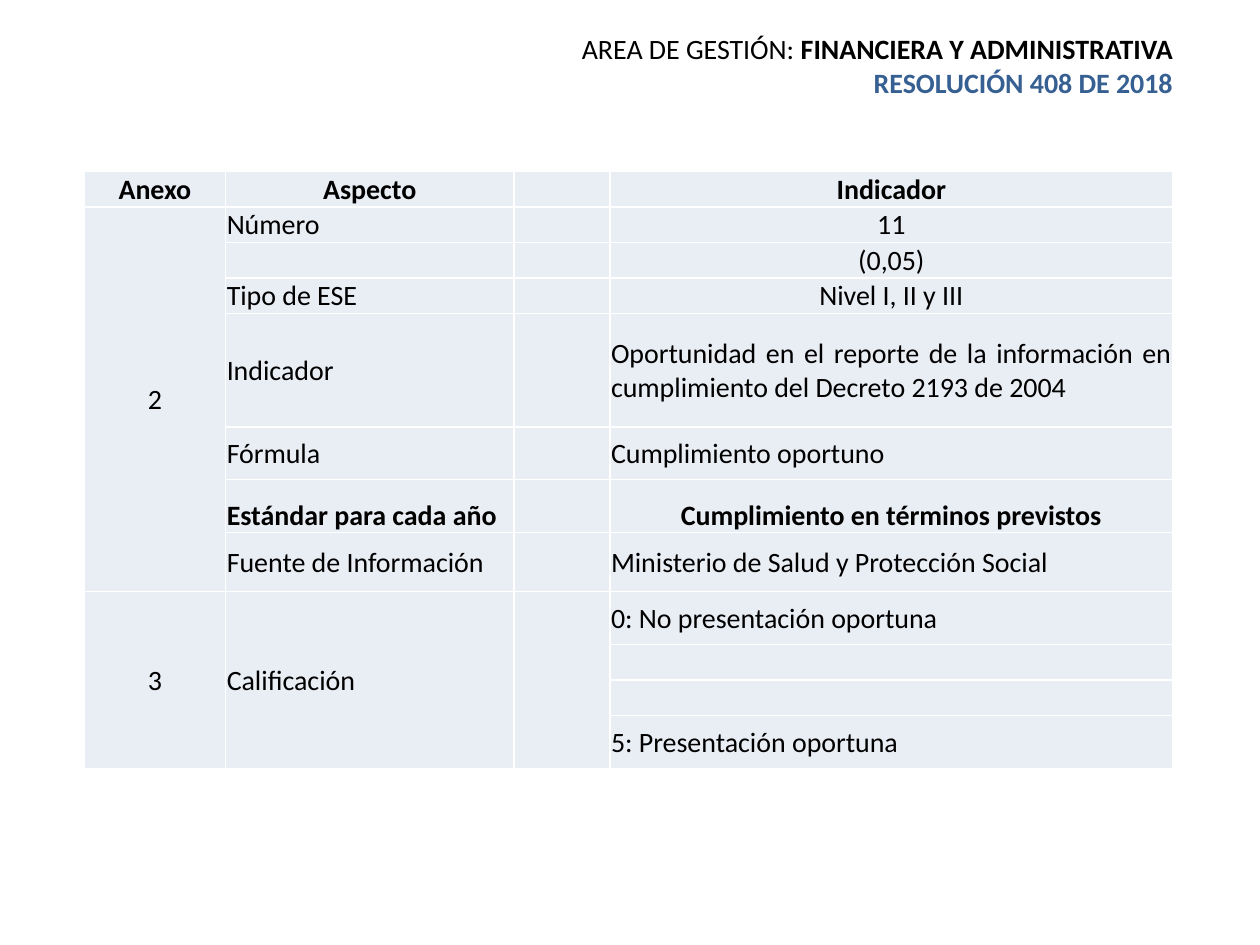
import pptx
import pptx.dml.color
import pptx.enum.text
import pptx.oxml
import pptx.oxml.ns
import pptx.util
from pptx.util import Inches

RGBColor = pptx.dml.color.RGBColor
ALIGN = pptx.enum.text.PP_ALIGN
ANCHOR = pptx.enum.text.MSO_ANCHOR

BLACK = RGBColor(0x00, 0x00, 0x00)
WHITE = RGBColor(0xFF, 0xFF, 0xFF)
BLUE = RGBColor(0x37, 0x60, 0x92)
CELL_FILL = RGBColor(0xE9, 0xED, 0xF4)
FONT = "Calibri"
SIZE = pptx.util.Pt(16)

L, C, J = ALIGN.LEFT, ALIGN.CENTER, ALIGN.JUSTIFY
MID, LOW = ANCHOR.MIDDLE, ANCHOR.BOTTOM

COLUMNS = [1.12, 2.29, 0.76, 4.47]
# Row height, anchor, bold, annex, aspect, indicator, indicator alignment
ROWS = [
    (0.28, LOW, True, "Anexo", "Aspecto", "Indicador", C),
    (0.28, LOW, False, "2", "Número", "11", C),
    (0.28, LOW, False, "", "", "(0,05)", C),
    (0.28, LOW, False, "", "Tipo de ESE", "Nivel I, II y III", C),
    (0.9, MID, False, "", "Indicador",
     "Oportunidad en el reporte de la información en cumplimiento "
     "del Decreto 2193 de 2004", J),
    (0.42, MID, False, "", "Fórmula", "Cumplimiento oportuno", L),
    (0.42, LOW, True, "", "Estándar para cada año",
     "Cumplimiento en términos previstos", C),
    (0.47, MID, False, "", "Fuente de Información",
     "Ministerio de Salud y Protección Social", L),
    (0.42, MID, False, "3", "Calificación", "0: No presentación oportuna", L),
    (0.28, MID, False, "", "", "", L),
    (0.28, MID, False, "", "", "", L),
    (0.42, MID, False, "", "", "5: Presentación oportuna", L),
]
# First row, last row, column
MERGES = [(1, 7, 0), (8, 11, 0), (8, 11, 1), (8, 11, 2)]


def add_text(p, text, bold=False, color=BLACK, align=L):
    p.alignment = align
    r = p.add_run()
    r.text = text
    r.font.name, r.font.size, r.font.bold = FONT, SIZE, bold
    r.font.color.rgb = color


def set_borders(cell, color=WHITE, width=pptx.util.Pt(1)):
    tc_pr = cell._tc.get_or_add_tcPr()
    for i, side in enumerate(("lnL", "lnR", "lnT", "lnB")):
        tc_pr.insert(i, pptx.oxml.parse_xml(
            f'<a:{side} {pptx.oxml.ns.nsdecls("a")} w="{int(width)}">'
            f'<a:solidFill><a:srgbClr val="{color}"/></a:solidFill></a:{side}>'))


def fill_cell(cell, text, anchor, **fmt):
    cell.fill.solid()
    cell.fill.fore_color.rgb = CELL_FILL
    set_borders(cell)
    cell.vertical_anchor = anchor
    cell.margin_left = cell.margin_right = cell.margin_top = Inches(0.01)
    cell.margin_bottom = 0
    p = cell.text_frame.paragraphs[0]
    if text:
        add_text(p, text, **fmt)
    else:
        # Empty cells keep the row height of the table's text size
        end = p._p.get_or_add_endParaRPr()
        end.set("sz", str(int(SIZE.pt * 100)))


def build_title(s, left, top, width, height):
    sp = s.shapes.title
    sp.left, sp.top, sp.width, sp.height = left, top, width, height
    tf = sp.text_frame
    tf.word_wrap = True
    tf.auto_size = pptx.enum.text.MSO_AUTO_SIZE.NONE
    tf.vertical_anchor = MID
    p = tf.paragraphs[0]
    add_text(p, "AREA DE GESTIÓN: ", align=ALIGN.RIGHT)
    add_text(p, "FINANCIERA Y ADMINISTRATIVA", bold=True, align=ALIGN.RIGHT)
    add_text(tf.add_paragraph(), "RESOLUCIÓN 408 DE 2018",
             bold=True, color=BLUE, align=ALIGN.RIGHT)


def build_table(s, left, top, width, height):
    table = s.shapes.add_table(len(ROWS), len(COLUMNS),
                               left, top, width, height).table
    table.first_row = table.horz_banding = False
    for column, w in zip(table.columns, COLUMNS):
        column.width = Inches(w)

    for i, (h, anchor, bold, annex, aspect, indicator, align) in enumerate(ROWS):
        table.rows[i].height = Inches(h)
        aspect_align = C if i == 0 else L
        parts = [(annex, C), (aspect, aspect_align), ("", L), (indicator, align)]
        for j, (text, al) in enumerate(parts):
            cell_anchor = MID if j == 0 and i > 0 else anchor
            fill_cell(table.cell(i, j), text, cell_anchor, bold=bold, align=al)

    for first, last, col in MERGES:
        table.cell(first, col).merge(table.cell(last, col))


def main():
    prs = pptx.Presentation()
    prs.slide_width, prs.slide_height = Inches(10), Inches(7.5)
    s = prs.slides.add_slide(prs.slide_layouts.get_by_name("Title Only"))
    # Heading
    build_title(s, Inches(0.51), Inches(0.25), Inches(8.9), Inches(0.54))
    # Indicator sheet
    build_table(s, Inches(0.67), Inches(1.36),
                Inches(sum(COLUMNS)), Inches(sum(row[0] for row in ROWS)))
    prs.save("out.pptx")


if __name__ == "__main__":
    main()
